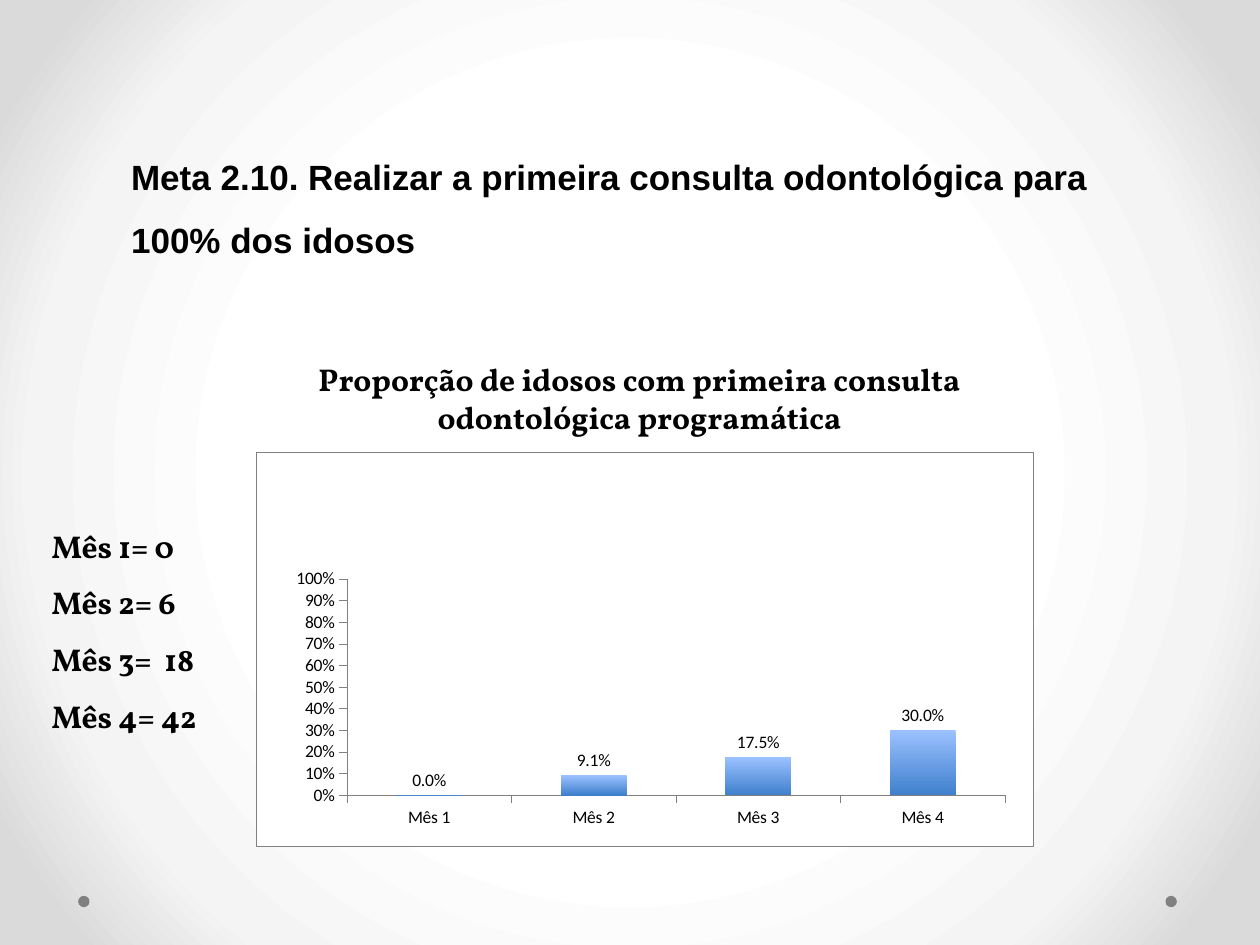
"""Build a slide on first dental consultations for the elderly, with a column chart."""
from dataclasses import dataclass

from pptx import Presentation
from pptx.chart.data import CategoryChartData
from pptx.dml.color import RGBColor
from pptx.enum.chart import XL_CHART_TYPE, XL_LABEL_POSITION, XL_TICK_MARK
from pptx.enum.shapes import MSO_SHAPE
from pptx.enum.text import MSO_ANCHOR, MSO_AUTO_SIZE, PP_ALIGN
from pptx.oxml import parse_xml
from pptx.oxml.ns import nsdecls, qn
from pptx.util import Inches, Pt

COLUMNS = XL_CHART_TYPE.COLUMN_CLUSTERED
LABEL_ABOVE = XL_LABEL_POSITION.OUTSIDE_END
TICK_OUT, TICK_NONE = XL_TICK_MARK.OUTSIDE, XL_TICK_MARK.NONE
OVAL = MSO_SHAPE.OVAL
TOP = MSO_ANCHOR.TOP
NO_AUTOFIT = MSO_AUTO_SIZE.NONE
LEFT, CENTER = PP_ALIGN.LEFT, PP_ALIGN.CENTER


@dataclass(frozen=True)
class Theme:
    text: str = "000000"
    gray: str = "808080"
    paper: str = "FFFFFF"
    background: tuple = ((50, "FFFFFF"), (76, "F4F4F4"), (92, "DADADA"))
    column: tuple = ("9BC1FF", "3F80CD")
    title_font: str = "Arial"
    text_font: str = "Vollkorn"
    chart_font: str = "Calibri"
    title_size: int = 20
    text_size: int = 18
    chart_size: int = 10
    line_width: float = 0.25


theme = Theme()


def style_font(font, name, size, bold):
    font.name = name
    font.size = Pt(size)
    font.bold = bold
    font.color.rgb = RGBColor.from_string(theme.text)


def fill_text(shape, box, lines, font_name, size, alignment, spacing):
    shape.left, shape.top, shape.width, shape.height = [Inches(value) for value in box]
    frame = shape.text_frame
    frame.text = "\n".join(lines)
    frame.word_wrap = True
    frame.auto_size = NO_AUTOFIT
    frame.vertical_anchor = TOP
    for paragraph in frame.paragraphs:
        properties = paragraph._p.get_or_add_pPr()
        properties.set("marL", "0")
        properties.set("indent", "0")
        properties.append(parse_xml(f"<a:buNone {nsdecls('a')}/>"))
        paragraph.alignment = alignment
        paragraph.line_spacing = spacing
        paragraph.space_before = Pt(0)
        style_font(paragraph.font, font_name, size, True)


presentation = Presentation()
presentation.slide_width = Inches(10)
presentation.slide_height = Inches(7.5)
slide = presentation.slides.add_slide(presentation.slide_layouts[1])

stops = "".join(
    f'<a:gs pos="{position * 1000}"><a:srgbClr val="{color}"/></a:gs>'
    for position, color in theme.background
)
slide.element.cSld.insert(0, parse_xml(
    f'<p:bg {nsdecls("p", "a")}><p:bgPr><a:gradFill rotWithShape="1"><a:gsLst>{stops}</a:gsLst>'
    '<a:path path="circle"><a:fillToRect l="50000" t="50000" r="50000" b="50000"/></a:path>'
    '</a:gradFill><a:effectLst/></p:bgPr></p:bg>'
))

for left in (9.25, 0.62):
    dot = slide.shapes.add_shape(OVAL, Inches(left), Inches(7.11), Inches(0.09), Inches(0.09))
    dot.shadow.inherit = False
    dot.fill.solid()
    dot.fill.fore_color.rgb = RGBColor.from_string(theme.gray)
    dot.line.fill.background()

title, month_list = slide.placeholders
fill_text(title, (0.94, 1.02, 8.02, 1.05),
          ["Meta 2.10. Realizar a primeira consulta odontológica para 100% dos idosos"],
          theme.title_font, theme.title_size, LEFT, 1.5)
fill_text(month_list, (0.31, 3.98, 1.8, 1.92),
          ["Mês 1= 0", "Mês 2= 6", "Mês 3=  18", "Mês 4= 42"],
          theme.text_font, theme.text_size, LEFT, 1.5)
chart_heading = slide.shapes.add_textbox(0, 0, 0, 0)
fill_text(chart_heading, (2.03, 2.81, 6.09, 1.01),
          ["Proporção de idosos com primeira consulta odontológica programática"],
          theme.text_font, theme.text_size, CENTER, 1.0)

data = CategoryChartData(number_format="0.0%")
data.categories = [f"Mês {month}" for month in range(1, 5)]
data.add_series("Series 1", (0, 0.091, 0.175, 0.3))
chart = slide.shapes.add_chart(
    COLUMNS, Inches(2.03), Inches(3.59), Inches(6.17), Inches(3.13), data
).chart
chart.has_title = False
chart.has_legend = False
style_font(chart.font, theme.chart_font, theme.chart_size, False)

for axis in (chart.category_axis, chart.value_axis):
    axis.has_major_gridlines = False
    axis.major_tick_mark = TICK_OUT
    axis.minor_tick_mark = TICK_NONE
    axis.format.line.color.rgb = RGBColor.from_string(theme.gray)
    axis.format.line.width = Pt(theme.line_width)
    style_font(axis.tick_labels.font, theme.chart_font, theme.chart_size, False)
value_axis = chart.value_axis
value_axis.minimum_scale = 0
value_axis.maximum_scale = 1
value_axis.major_unit = 0.1
value_axis.tick_labels.number_format = "0%"
value_axis.tick_labels.number_format_is_linked = False

plot = chart.plots[0]
plot.gap_width = 150
plot.vary_by_categories = False
series = plot.series[0]
column_fill = series.format.fill
column_fill.gradient()
column_fill.gradient_angle = 270
for stop, color in zip(column_fill.gradient_stops, theme.column):
    stop.color.rgb = RGBColor.from_string(color)
labels = series.data_labels
labels.show_value = True
labels.number_format = "0.0%"
labels.number_format_is_linked = False
labels.position = LABEL_ABOVE
style_font(labels.font, theme.chart_font, theme.chart_size, False)

paper_fill = f'<a:solidFill><a:srgbClr val="{theme.paper}"/></a:solidFill>'
border = (f'<a:ln w="{Pt(theme.line_width)}"><a:solidFill><a:srgbClr val="{theme.gray}"/>'
          '</a:solidFill></a:ln>')
chart_element = chart.element.chart
chart_element.addnext(parse_xml(f'<c:spPr {nsdecls("c", "a")}>{paper_fill}{border}</c:spPr>'))
plot_area = chart_element.plotArea
plot_area.append(parse_xml(f'<c:spPr {nsdecls("c", "a")}>{paper_fill}</c:spPr>'))
for layout in plot_area.findall(qn("c:layout")):
    plot_area.remove(layout)
placement = "".join(
    f'<c:{name} val="{value}"/>'
    for name, value in (("layoutTarget", "inner"), ("xMode", "edge"), ("yMode", "edge"),
                        ("x", 0.117), ("y", 0.321), ("w", 0.847), ("h", 0.549))
)
plot_area.insert(0, parse_xml(
    f'<c:layout {nsdecls("c")}><c:manualLayout>{placement}</c:manualLayout></c:layout>'
))

presentation.save("out.pptx")
